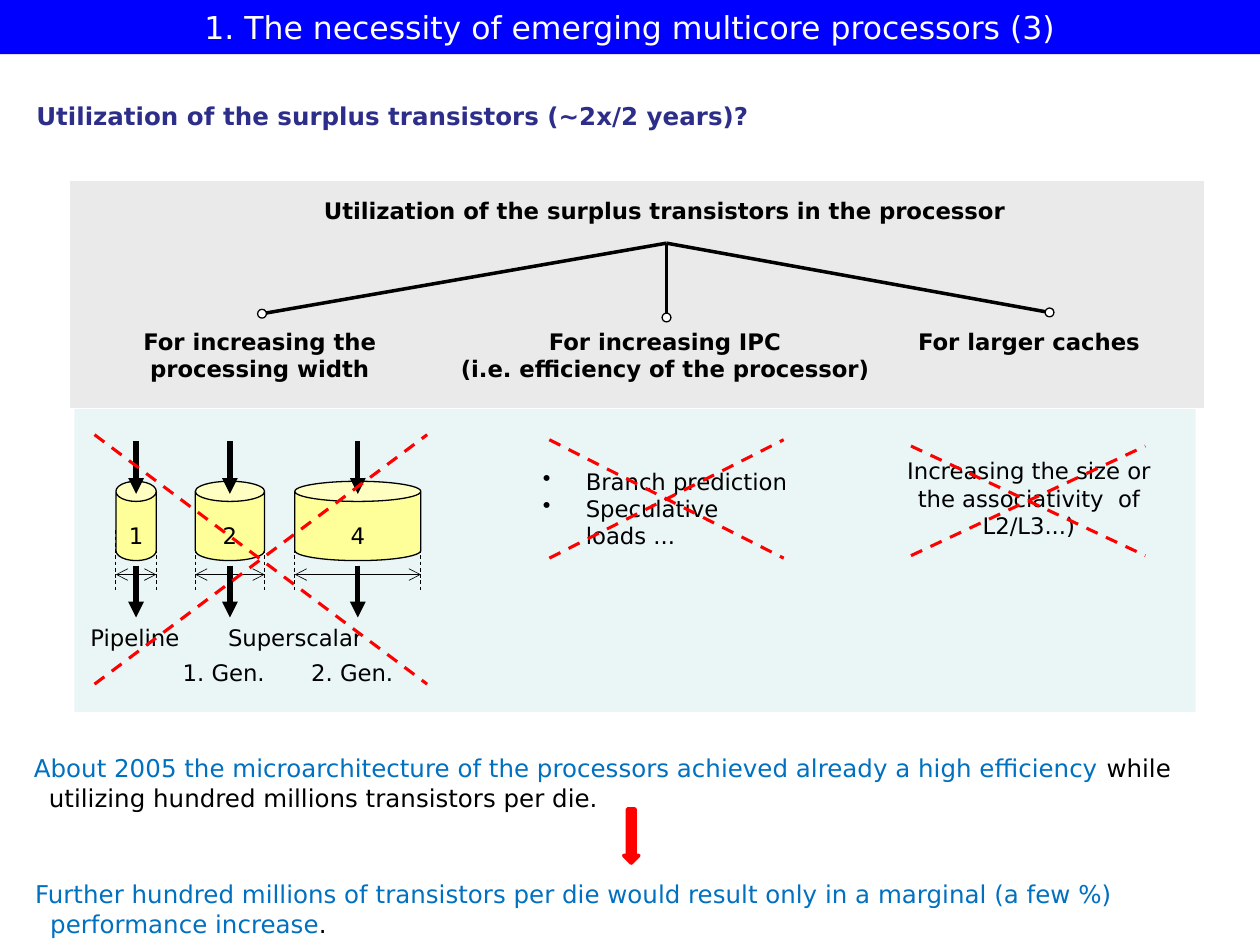
from dataclasses import dataclass

from lxml import etree
from pptx import Presentation
from pptx.dml.color import RGBColor
from pptx.enum.dml import MSO_LINE
from pptx.enum.shapes import MSO_CONNECTOR, MSO_SHAPE
from pptx.enum.text import MSO_ANCHOR, PP_ALIGN
from pptx.oxml.ns import qn
from pptx.util import Inches, Pt

LEFT, CENTER = PP_ALIGN.LEFT, PP_ALIGN.CENTER
MIDDLE = MSO_ANCHOR.MIDDLE
RECT, CAN, ELLIPSE = MSO_SHAPE.RECTANGLE, MSO_SHAPE.CAN, MSO_SHAPE.OVAL
DOWN_ARROW = MSO_SHAPE.DOWN_ARROW
STRAIGHT, DASH = MSO_CONNECTOR.STRAIGHT, MSO_LINE.DASH

FONT = "DejaVu Sans"
BLACK, WHITE, RED = "000000", "FFFFFF", "FF0000"
BLUE, NAVY, TITLE_BLUE = "0070C0", "2D2D8A", "0000FF"
YELLOW, GREY, PALE = "FFFF99", "EAEAEA", "EAF5F6"


@dataclass
class Run:
    text: str
    color: str = BLACK


@dataclass
class Para:
    runs: list[Run]
    indent: float = 0
    bullet: bool = False


@dataclass
class Pipe:
    """A processing pipeline drawn as a can, with its width marked below."""
    label: str
    left: float
    width: float


@dataclass
class Cross:
    left: float
    top: float
    right: float
    bottom: float


PIPES = [Pipe("1", 0.92, 0.32), Pipe("2", 1.55, 0.55), Pipe("4", 2.34, 1)]
CROSSES = [
    Cross(0.75, 3.45, 3.39, 5.43),
    Cross(4.36, 3.49, 6.22, 4.43),
    Cross(7.23, 3.54, 9.09, 4.41),
]
CAN_TOP, CAN_HEIGHT, LID_HEIGHT = 3.82, 0.63, 0.16
ROOT = (5.29, 1.93)
BRANCH_ENDS = [(2.08, 2.49), (8.33, 2.48), (5.29, 2.52)]
DOT = 0.07

prs = Presentation()
prs.slide_width, prs.slide_height = Inches(10), Inches(7.5)
slide = prs.slides.add_slide(prs.slide_layouts[6])


def rgb(color: str) -> RGBColor:
    return RGBColor.from_string(color)


def add_box(kind, left: float, top: float, width: float, height: float,
            fill: str, line: str | None = None, weight: float = 0.75):
    shape = slide.shapes.add_shape(
        kind, Inches(left), Inches(top), Inches(width), Inches(height))
    shape.shadow.inherit = False
    shape.fill.solid()
    shape.fill.fore_color.rgb = rgb(fill)
    if line:
        shape.line.color.rgb = rgb(line)
        shape.line.width = Pt(weight)
    else:
        shape.line.fill.background()
    return shape


def add_line(start: tuple[float, float], end: tuple[float, float], weight: float,
             color: str = BLACK, dashed: bool = False,
             head: str | None = None, tail: str | None = None) -> None:
    line = slide.shapes.add_connector(
        STRAIGHT, *(Inches(value) for value in (*start, *end)))
    line.line.color.rgb = rgb(color)
    line.line.width = Pt(weight)
    if dashed:
        line.line.dash_style = DASH
    properties = line._element.spPr
    for tag, arrow in (("a:headEnd", head), ("a:tailEnd", tail)):
        if arrow:
            etree.SubElement(properties.find(qn("a:ln")), qn(tag), type=arrow)
    etree.SubElement(properties, qn("a:effectLst"))


def fill_text(frame, paras: list[Para], size: float, align, bold: bool = False) -> None:
    for index, para in enumerate(paras):
        paragraph = frame.paragraphs[0] if index == 0 else frame.add_paragraph()
        paragraph.alignment = align
        if para.indent:
            properties = paragraph._p.get_or_add_pPr()
            properties.set("marL", str(Inches(para.indent)))
            if para.bullet:
                properties.set("indent", str(-Inches(para.indent)))
                etree.SubElement(properties, qn("a:buChar"), char="•")
        for part in para.runs:
            run = paragraph.add_run()
            run.text = part.text
            run.font.name, run.font.size, run.font.bold = FONT, Pt(size), bold
            run.font.color.rgb = rgb(part.color)


def add_text(left: float, top: float, width: float, height: float, paras: list[Para],
             size: float = 13, align=LEFT, bold: bool = False, wrap: bool = False,
             margins: tuple[float, float] = (0.05, 0.05)) -> None:
    """Margins are given as (sides, top and bottom)."""
    frame = slide.shapes.add_textbox(
        Inches(left), Inches(top), Inches(width), Inches(height)).text_frame
    frame.word_wrap = wrap
    frame.margin_left = frame.margin_right = Inches(margins[0])
    frame.margin_top = frame.margin_bottom = Inches(margins[1])
    fill_text(frame, paras, size, align, bold)


def plain(*lines: str, color: str = BLACK) -> list[Para]:
    return [Para([Run(line, color)]) for line in lines]


def add_pipe(pipe: Pipe) -> None:
    right, middle = pipe.left + pipe.width, pipe.left + pipe.width / 2
    can = add_box(CAN, pipe.left, CAN_TOP, pipe.width, CAN_HEIGHT, YELLOW, BLACK)
    can.adjustments[0] = LID_HEIGHT / min(pipe.width, CAN_HEIGHT)
    for top, bottom in ((3.5, 3.92), (4.49, 4.9)):
        add_line((middle, top), (middle, bottom), 3, tail="triangle")
    for edge in (pipe.left, right):
        add_line((edge, 4.21), (edge, 4.68), 0.5, dashed=True)
    add_line((pipe.left, 4.56), (right, 4.56), 0.4, head="arrow", tail="arrow")
    add_text(middle - 0.16, 4.09, 0.32, 0.32, plain(pipe.label), align=CENTER)


def add_cross(cross: Cross) -> None:
    for start, end in ((cross.top, cross.bottom), (cross.bottom, cross.top)):
        add_line((cross.left, start), (cross.right, end), 1.75, RED, dashed=True)


# Options and what they consist of
add_box(RECT, 0.59, 3.24, 8.9, 2.41, PALE)
add_text(1.76, 4.9, 1.18, 0.32, plain("Superscalar"))
add_text(4.26, 3.66, 2.1, 0.76,
         [Para([Run(technique)], indent=0.34, bullet=True)
          for technique in ("Branch prediction", "Speculative loads ...")], wrap=True)
add_text(7.09, 3.58, 2.15, 0.76,
         plain("Increasing the size or", "the associativity  of", "L2/L3...)"),
         align=CENTER)
for left, generation in ((1.4, "1. Gen."), (2.42, "2. Gen.")):
    add_text(left, 5.18, 0.78, 0.32, plain(generation))
for pipe in PIPES:
    add_pipe(pipe)
add_text(0.55, 4.9, 1.04, 0.32, plain("Pipeline"), align=CENTER)
for cross in CROSSES:
    add_cross(cross)

# Question and conclusions
add_text(0.19, 0.75, 5.97, 0.34,
         plain("Utilization of the surplus transistors (~2x/2 years)?", color=NAVY),
         size=14, bold=True, margins=(0.1, 0.05))
add_text(0.17, 5.93, 9.29, 0.57, [
    Para([Run("About 2005 the microarchitecture of the processors achieved already "
              "a high efficiency ", BLUE), Run("while")]),
    Para([Run("utilizing hundred millions transistors per die.")], indent=0.12),
], size=14, margins=(0.1, 0.05))
add_box(DOWN_ARROW, 4.95, 6.42, 0.12, 0.43, RED, RED, 2)
add_text(0.18, 6.93, 9.82, 0.57, [
    Para([Run("Further hundred millions of transistors per die would result only "
              "in a marginal (a few %)", BLUE)]),
    Para([Run("performance increase", BLUE), Run(".")], indent=0.12),
], size=14, wrap=True, margins=(0.1, 0.05))

# Tree of options
add_box(RECT, 0.55, 1.43, 9.01, 1.81, GREY, WHITE)
for left, top, width, height, lines in (
    (1.8, 1.56, 6.94, 0.22, ["Utilization of the surplus transistors in the processor"]),
    (1.13, 2.6, 1.86, 0.44, ["For increasing the", "processing width"]),
    (3.63, 2.6, 3.29, 0.44, ["For increasing IPC", "(i.e. efficiency of the processor)"]),
    (7.28, 2.6, 1.77, 0.22, ["For larger caches"]),
):
    add_text(left, top, width, height, plain(*lines),
             align=CENTER, bold=True, margins=(0, 0))
for end in BRANCH_ENDS:
    add_line(ROOT, end, 0)
for x, y in BRANCH_ENDS:
    add_box(ELLIPSE, x - DOT / 2, y - DOT / 2, DOT, DOT, WHITE, BLACK, 0)

title = add_box(RECT, 0, 0, 10, 0.43, TITLE_BLUE).text_frame
title.vertical_anchor = MIDDLE
title.word_wrap = True
fill_text(title, plain("1. The necessity of emerging multicore processors (3)", color=WHITE),
          18, CENTER)

prs.save("out.pptx")
